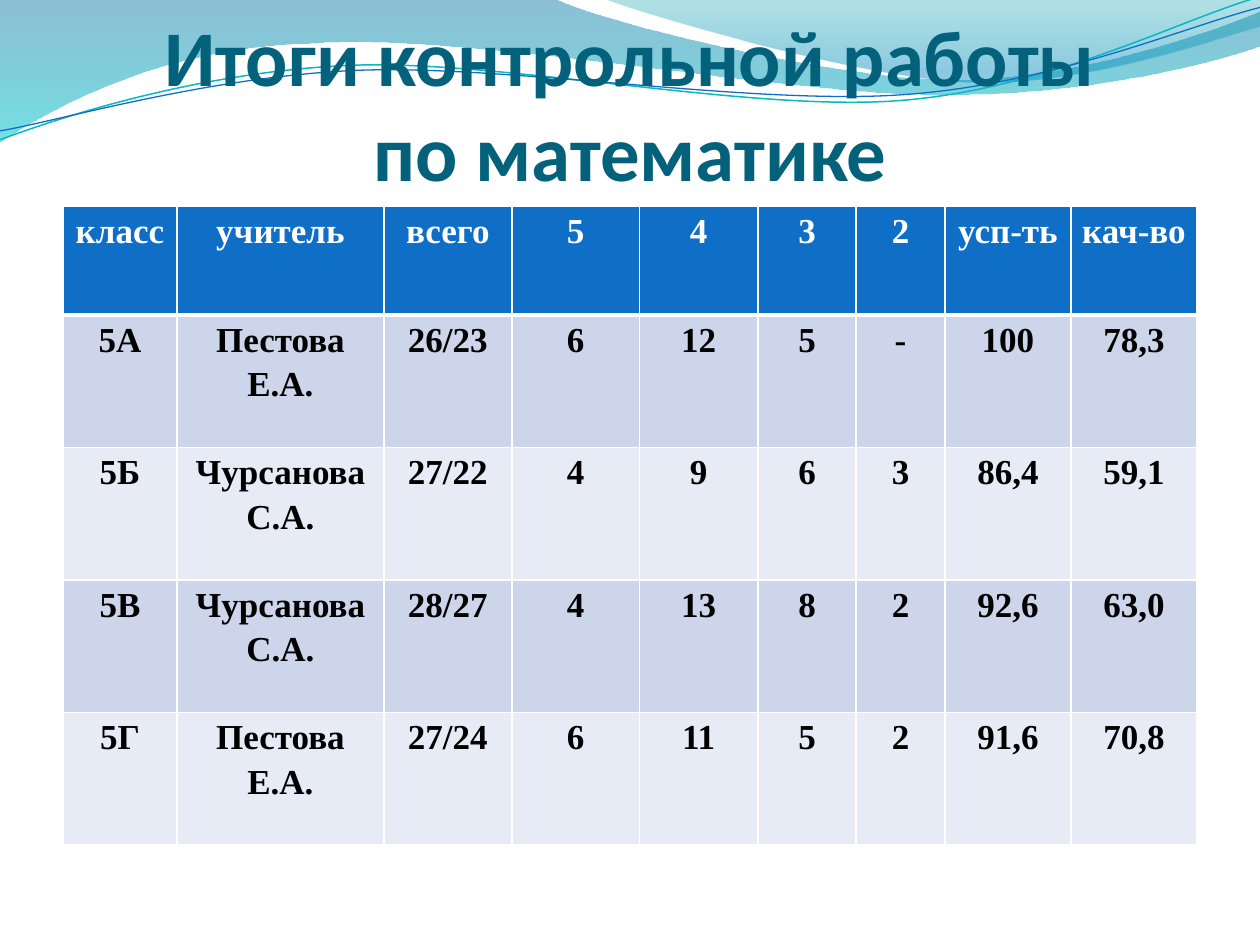
from math import cos, radians, sin

from lxml import etree
from pptx import Presentation
from pptx.dml.color import RGBColor
from pptx.enum.text import MSO_ANCHOR, MSO_AUTO_SIZE, PP_ALIGN
from pptx.oxml.ns import qn
from pptx.util import Cm, Pt

CENTER = PP_ALIGN.CENTER
BOTTOM = MSO_ANCHOR.BOTTOM
NO_AUTOFIT = MSO_AUTO_SIZE.NONE

WHITE = RGBColor(0xFF, 0xFF, 0xFF)
BLACK = RGBColor(0x00, 0x00, 0x00)
TITLE_TEAL = RGBColor(0x04, 0x61, 0x7B)
HEADER_BLUE = RGBColor(0x0F, 0x6F, 0xC6)
BAND_DARK = RGBColor(0xCC, 0xD5, 0xEA)
BAND_LIGHT = RGBColor(0xE7, 0xEB, 0xF5)
LINE_TEAL = RGBColor(0x0A, 0xB8, 0xBF)
WAVE_BLUE = RGBColor(0x00, 0x74, 0xA1)
WAVE_CYAN = RGBColor(0x00, 0xC6, 0xCF)
CREST_TEAL = RGBColor(0x00, 0xA1, 0xA9)
CREST_BLUE = RGBColor(0x00, 0x8B, 0xBF)

LINE_TILT = 357.3

# Frames are left, top, width, height in cm.
WIDE_WAVE_FRAME = (-0.03, -0.03, 25.46, 2.9)
RIGHT_CREST_FRAME = (12.17, -0.03, 13.23, 1.78)
TEAL_LINE_FRAME = (-0.05, 0.56, 25.45, 1.8)
BLUE_LINE_FRAME = (-0.05, 0.76, 25.48, 1.47)

# Outlines in cm on the slide: two numbers are a straight line, six a Bezier curve.
WIDE_WAVE = [
    (0, 0), (11.18, -0.03),
    (12.09, 0.43, 16.87, 1.6, 19.25, 1.6),
    (21.67, 1.6, 24.33, 0.66, 25.4, 0.23),
    (25.43, 0.91),
    (24.97, 1.12, 22.1, 1.93, 18.95, 1.91),
    (15.8, 1.91, 9.7, 0.71, 6.53, 0.86),
    (3.28, 0.91, 1.17, 2.11, -0.03, 2.87),
    (0, 0),
]
RIGHT_CREST = [
    (12.17, -0.03),
    (12.93, 0.28, 17.32, 1.57, 19.53, 1.65),
    (21.74, 1.75, 24.41, 0.81, 25.4, 0.53),
    (25.4, 0), (12.17, -0.03),
]
TEAL_LINE = [
    (0, 2.82),
    (1.22, 2.36, 4.01, 1.45, 7.04, 1.32),
    (10.03, 1.19, 15.06, 2.26, 18.11, 2.03),
    (21.16, 1.8, 23.83, 0.38, 25.35, -0.05),
]
BLUE_LINE = [
    (0, 2.64),
    (1.19, 2.44, 4.17, 1.55, 7.19, 1.42),
    (10.24, 1.3, 15.16, 2.13, 18.21, 1.91),
    (21.23, 1.7, 23.9, 0.53, 25.4, 0.15),
]

COLUMN_WIDTHS = [2.3, 4.17, 2.58, 2.57, 2.39, 1.98, 1.79, 2.54, 2.54]
HEADER_HEIGHT, CLASS_HEIGHT = 2.19, 2.67
RESULTS = [
    ["класс", "учитель", "всего", "5", "4", "3", "2", "усп-ть", "кач-во"],
    ["5А", "Пестова Е.А.", "26/23", "6", "12", "5", "-", "100", "78,3"],
    ["5Б", "Чурсанова С.А.", "27/22", "4", "9", "6", "3", "86,4", "59,1"],
    ["5В", "Чурсанова С.А.", "28/27", "4", "13", "8", "2", "92,6", "63,0"],
    ["5Г", "Пестова Е.А.", "27/24", "6", "11", "5", "2", "91,6", "70,8"],
]


def set_format(target, values):
    for name, value in values.items():
        setattr(target, name, value)


def set_font(font, color, **values):
    set_format(font, values)
    font.color.rgb = color


def local_points(segment, frame, tilt):
    """Convert slide points to EMU points inside a frame turned by tilt degrees."""
    left, top, width, height = frame
    turn = radians(-tilt)
    for x, y in zip(segment[::2], segment[1::2]):
        dx, dy = x - left - width / 2, y - top - height / 2
        yield (Cm(width / 2 + dx * cos(turn) - dy * sin(turn)),
               Cm(height / 2 + dx * sin(turn) + dy * cos(turn)))


def add_outline(slide, outline, frame, tilt=0):
    """Add a freeform whose segments are true Bezier curves."""
    builder = slide.shapes.build_freeform(0, 0)
    builder.add_line_segments([(1, 1)], close=False)
    shape = builder.convert_to_shape()
    left, top, width, height = map(Cm, frame)
    set_format(shape, {"left": left, "top": top, "width": width,
                       "height": height, "rotation": tilt})
    shape.shadow.inherit = False
    curve = next(shape._element.iter(qn("a:path")))
    for child in list(curve):
        curve.remove(child)
    curve.set("w", str(width))
    curve.set("h", str(height))
    for index, segment in enumerate(outline):
        tag = "moveTo" if index == 0 else "lnTo" if len(segment) == 2 else "cubicBezTo"
        command = etree.SubElement(curve, qn(f"a:{tag}"))
        for x, y in local_points(segment, frame, tilt):
            etree.SubElement(command, qn("a:pt"), x=str(x), y=str(y))
    return shape


def add_wave(slide, outline, frame, stops):
    """Add a filled wave; each stop is a position, a colour and an opacity in %."""
    wave = add_outline(slide, outline, frame)
    etree.SubElement(next(wave._element.iter(qn("a:path"))), qn("a:close"))
    wave.line.fill.background()
    wave.fill.gradient()
    wave.fill.gradient_angle = 270
    for stop, (position, color, _) in zip(wave.fill.gradient_stops, stops):
        stop.position = position
        stop.color.rgb = color
    colors = wave._element.spPr.iter(qn("a:srgbClr"))
    for color_element, (_, _, opacity) in zip(colors, stops):
        etree.SubElement(color_element, qn("a:alpha"), val=str(opacity * 1000))


def add_wave_line(slide, outline, frame, color, width):
    wave_line = add_outline(slide, outline, frame, LINE_TILT)
    wave_line.fill.background()
    wave_line.line.color.rgb = color
    wave_line.line.width = Pt(width)


def add_title(slide):
    title = slide.shapes.title
    slide.shapes._spTree.append(title._element)  # in front of the waves
    set_format(title, {"left": Cm(1.27), "top": Cm(0.79),
                       "width": Cm(22.86), "height": Cm(3.18)})
    frame = title.text_frame
    set_format(frame, {"vertical_anchor": BOTTOM, "auto_size": NO_AUTOFIT, "word_wrap": True,
                       "margin_left": 0, "margin_right": 0,
                       "margin_top": Cm(0.13), "margin_bottom": 0})
    frame.text = "Итоги контрольной работы\vпо математике"
    paragraph = frame.paragraphs[0]
    paragraph.alignment = CENTER
    for run in paragraph.runs:
        set_font(run.font, TITLE_TEAL, name="Calibri", size=Pt(45), bold=True)


def set_borders(cell, widths):
    properties = cell._tc.get_or_add_tcPr()
    for side, width in widths.items():
        border = etree.SubElement(properties, qn(f"a:ln{side}"), w=str(Pt(width)))
        fill = etree.SubElement(border, qn("a:solidFill"))
        etree.SubElement(fill, qn("a:srgbClr"), val=str(WHITE))


def fill_cell(cell, text, row):
    set_format(cell, {"margin_left": Cm(0.17), "margin_right": Cm(0.17),
                      "margin_top": 0, "margin_bottom": 0})
    set_borders(cell, {"L": 1, "R": 1, "T": 3 if row == 1 else 1, "B": 3 if row == 0 else 1})
    cell.fill.solid()
    bands = [BAND_LIGHT, BAND_DARK]
    cell.fill.fore_color.rgb = HEADER_BLUE if row == 0 else bands[row % 2]
    cell.text = text
    paragraph = cell.text_frame.paragraphs[0]
    set_format(paragraph, {"alignment": CENTER, "line_spacing": 1.15})
    set_font(paragraph.runs[0].font, WHITE if row == 0 else BLACK,
             name="Times New Roman", size=Pt(20), bold=True)


def add_results_table(slide):
    heights = [HEADER_HEIGHT] + [CLASS_HEIGHT] * (len(RESULTS) - 1)
    table = slide.shapes.add_table(
        len(RESULTS), len(COLUMN_WIDTHS), Cm(1.27), Cm(4.16),
        Cm(sum(COLUMN_WIDTHS)), Cm(sum(heights))).table
    for column, width in zip(table.columns, COLUMN_WIDTHS):
        column.width = Cm(width)
    for row, (height, values) in enumerate(zip(heights, RESULTS)):
        table.rows[row].height = Cm(height)
        for column, text in enumerate(values):
            fill_cell(table.cell(row, column), text, row)


def main():
    presentation = Presentation()
    set_format(presentation, {"slide_width": Cm(25.4), "slide_height": Cm(19.05)})
    slide = presentation.slides.add_slide(presentation.slide_layouts[5])
    add_wave(slide, WIDE_WAVE, WIDE_WAVE_FRAME, [(0, WAVE_BLUE, 45), (1, WAVE_CYAN, 55)])
    add_wave(slide, RIGHT_CREST, RIGHT_CREST_FRAME,
             [(0, CREST_TEAL, 30), (0.8, CREST_BLUE, 45)])
    add_wave_line(slide, TEAL_LINE, TEAL_LINE_FRAME, LINE_TEAL, 0.85)
    add_wave_line(slide, BLUE_LINE, BLUE_LINE_FRAME, HEADER_BLUE, 0.75)
    add_title(slide)
    add_results_table(slide)
    presentation.save("out.pptx")


if __name__ == "__main__":
    main()
